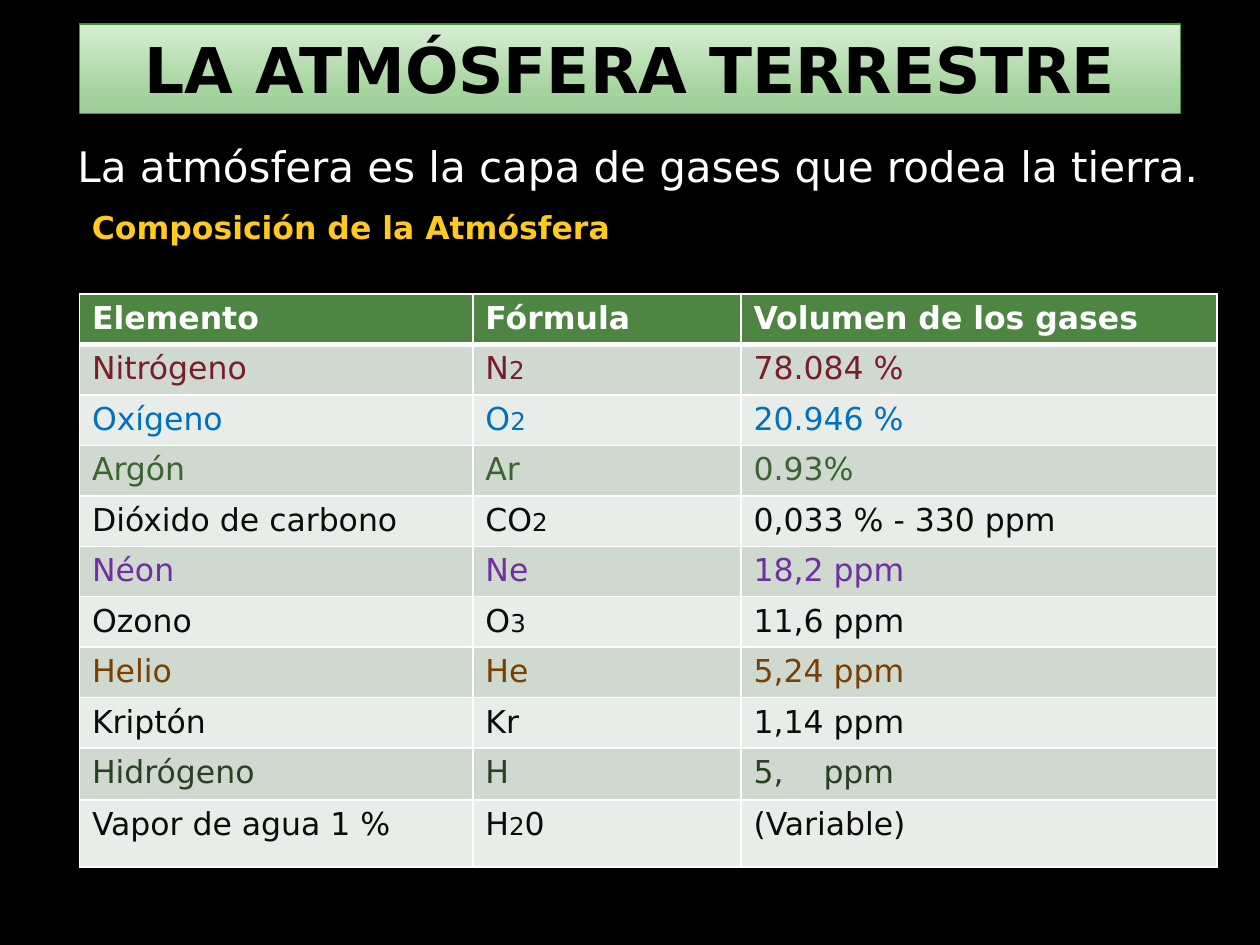
from copy import deepcopy

from pptx import Presentation
from pptx.dml.color import RGBColor
from pptx.enum.shapes import MSO_SHAPE
from pptx.enum.text import MSO_ANCHOR, PP_ALIGN
from pptx.oxml.ns import qn
from pptx.util import Pt
from lxml.etree import SubElement

FONT = "DejaVu Sans"
WHITE, BLACK, INK = "FFFFFF", "000000", "0C0C0C"
HEADER_FILL, BAND_FILLS = "4E8542", ("D0D9CF", "E9EDE9")
TITLE_STOPS = [(0, "9DCD96"), (0.25, "A5D49E"), (1, "D7EED3")]

COLUMN_WIDTHS = (224.8, 153.2, 272.2)
ROW_HEIGHTS = [28.8] * 9 + [29.6, 38.4]
HEADER = ("Elemento", "Fórmula", "Volumen de los gases")
# An underscore marks the next character as a small index
GASES = [
    ("Nitrógeno", "N_2", "78.084 %", "771F28"),
    ("Oxígeno", "O_2", "20.946 %", "0070C0"),
    ("Argón", "Ar", "0.93%", "3B6432"),
    ("Dióxido de carbono", "CO_2", "0,033 % - 330 ppm", INK),
    ("Néon", "Ne", "18,2 ppm", "7030A0"),
    ("Ozono", "O_3", "11,6 ppm", INK),
    ("Helio", "He", "5,24 ppm", "784004"),
    ("Kriptón", "Kr", "1,14 ppm", INK),
    ("Hidrógeno", "H", "5,\tppm", "274221"),
    ("Vapor de agua 1 %", "H_20", "(Variable)", INK),
]


def rgb(color):
    return RGBColor.from_string(color)


def style(paragraph, size, color, bold=False):
    font = paragraph.font
    font.name, font.size, font.bold = FONT, Pt(size), bold
    font.color.rgb = rgb(color)


def add_title(slide, text):
    banner = slide.shapes.add_shape(
        MSO_SHAPE.RECTANGLE, Pt(45.4), Pt(13.7), Pt(629.3), Pt(51))
    banner.shadow.inherit = False
    banner.line.color.rgb = rgb("439631")
    banner.line.width = Pt(0.75)

    # Three-stop gradient, darkest at the bottom
    banner.fill.gradient()
    banner.fill.gradient_angle = 90
    stop_list = banner.fill._fill._gradFill.find(qn("a:gsLst"))
    stop_list.insert(1, deepcopy(stop_list[0]))
    for stop, (position, color) in zip(banner.fill.gradient_stops, TITLE_STOPS):
        stop.position = position
        stop.color.rgb = rgb(color)

    banner.text_frame.vertical_anchor = MSO_ANCHOR.MIDDLE
    paragraph = banner.text_frame.paragraphs[0]
    paragraph.text = text
    paragraph.alignment = PP_ALIGN.CENTER
    style(paragraph, 36, BLACK, bold=True)


def add_text(slide, text, left, top, width, height, size, color, bold=False):
    box = slide.shapes.add_textbox(Pt(left), Pt(top), Pt(width), Pt(height))
    box.text_frame.word_wrap = True
    paragraph = box.text_frame.paragraphs[0]
    paragraph.text = text
    style(paragraph, size, color, bold)


def set_borders(cell, bottom_width):
    properties = cell._tc.get_or_add_tcPr()
    widths = {"a:lnL": 1, "a:lnR": 1, "a:lnT": 1, "a:lnB": bottom_width}
    for position, (side, width) in enumerate(widths.items()):
        line = SubElement(properties, qn(side), w=str(Pt(width)))
        properties.insert(position, line)
        fill = SubElement(line, qn("a:solidFill"))
        SubElement(fill, qn("a:srgbClr"), val=WHITE)


def fill_cell(cell, text, fill, color, bold=False, bottom_width=1):
    cell.fill.solid()
    cell.fill.fore_color.rgb = rgb(fill)
    set_borders(cell, bottom_width)
    paragraph = cell.text_frame.paragraphs[0]
    if "\t" in text:
        tabs = SubElement(paragraph._p.get_or_add_pPr(), qn("a:tabLst"))
        SubElement(tabs, qn("a:tab"), pos=str(Pt(40)), algn="l")

    base, _, rest = text.partition("_")
    for part, size in ((base, 18), (rest[:1], 14), (rest[1:], 18)):
        if part:
            run = paragraph.add_run()
            run.text = part
            run.font.size = Pt(size)
    style(paragraph, 18, color, bold)


def add_gas_table(slide):
    table = slide.shapes.add_table(
        len(GASES) + 1, len(HEADER), Pt(45.4), Pt(168),
        Pt(sum(COLUMN_WIDTHS)), Pt(sum(ROW_HEIGHTS))).table
    for column, width in zip(table.columns, COLUMN_WIDTHS):
        column.width = Pt(width)
    for row, height in zip(table.rows, ROW_HEIGHTS):
        row.height = Pt(height)

    for cell, heading in zip(table.rows[0].cells, HEADER):
        fill_cell(cell, heading, HEADER_FILL, WHITE, bold=True, bottom_width=3)
    for index, (*values, color) in enumerate(GASES):
        for cell, value in zip(table.rows[index + 1].cells, values):
            fill_cell(cell, value, BAND_FILLS[index % 2], color)


def main():
    presentation = Presentation()
    presentation.slide_width, presentation.slide_height = Pt(720), Pt(540)
    slide = presentation.slides.add_slide(presentation.slide_layouts[6])
    slide.background.fill.solid()
    slide.background.fill.fore_color.rgb = rgb(BLACK)

    # Heading and definition
    add_title(slide, "LA ATMÓSFERA TERRESTRE")
    add_text(slide, "La atmósfera es la capa de gases que rodea la tierra.",
             37.2, 77, 669, 65.5, 24, WHITE)

    # Composition of the atmosphere
    add_gas_table(slide)
    add_text(slide, "Composición de la Atmósfera",
             45.4, 115.2, 311.8, 28.8, 18, "FFC91D", bold=True)

    presentation.save("out.pptx")


if __name__ == "__main__":
    main()
